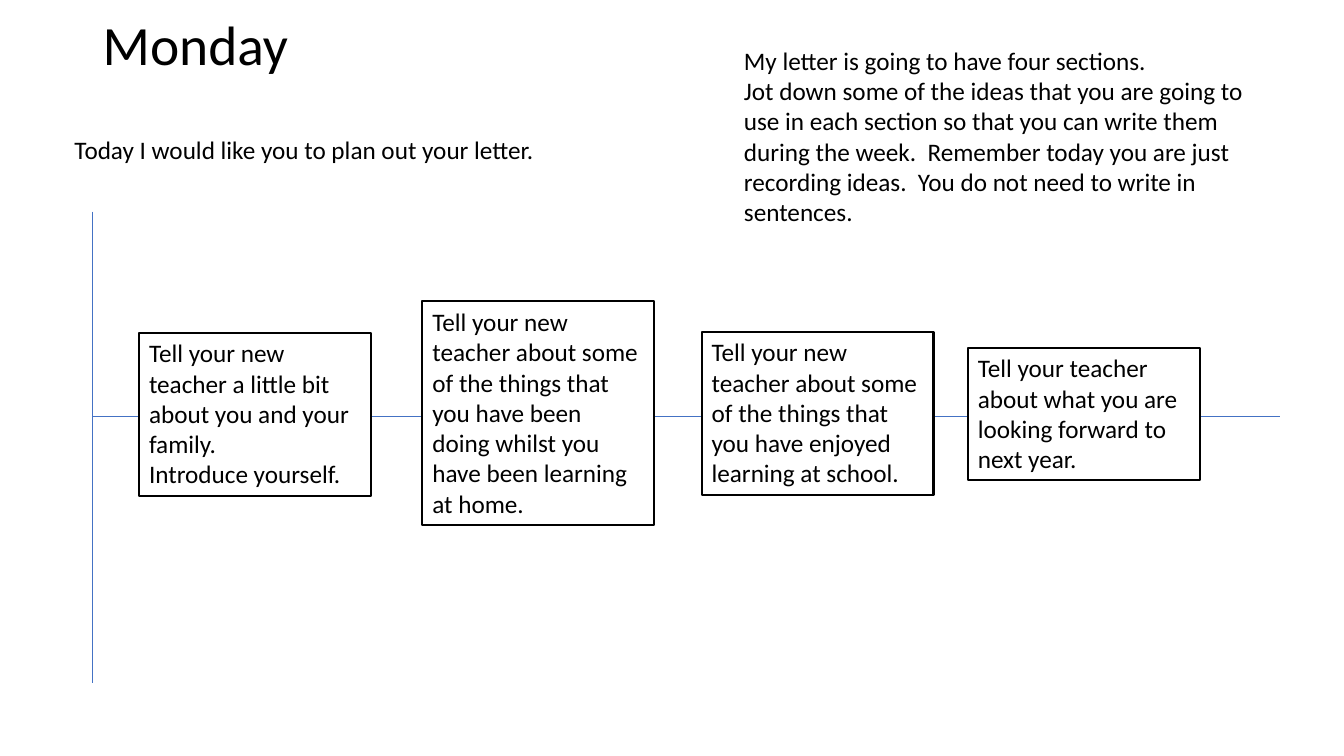
from lxml import etree
from pptx import Presentation
from pptx.dml.color import RGBColor
from pptx.enum.shapes import MSO_CONNECTOR, MSO_SHAPE
from pptx.enum.text import MSO_ANCHOR, PP_ALIGN
from pptx.oxml.ns import qn
from pptx.util import Inches, Pt

LINE = MSO_CONNECTOR.STRAIGHT
RECT = MSO_SHAPE.RECTANGLE
TOP, MIDDLE = MSO_ANCHOR.TOP, MSO_ANCHOR.MIDDLE
LEFT = PP_ALIGN.LEFT

FONT = "Calibri"
COLORS = {"text": "000000", "box": "FFFFFF", "border": "000000", "axis": "4472C4"}

AXIS_X, AXIS_Y = 0.92, 4.13
SECTION_WIDTH = 2.3
# left, top, height, paragraphs
SECTIONS = [
    (1.38, 3.3, 1.62, ["Tell your new teacher a little bit about you and your family.",
                       "Introduce yourself."]),
    (4.19, 2.99, 2.22, ["Tell your new teacher about some of the things that you have "
                        "been doing whilst you have been learning at home."]),
    (6.96, 3.29, 1.62, ["Tell your new teacher about some of the things that you have "
                        "enjoyed learning at school."]),
    (9.6, 3.45, 1.31, ["Tell your teacher about what you are looking forward to next year."]),
]
INSTRUCTIONS = [
    "My letter is going to have four sections.",
    "Jot down some of the ideas that you are going to use in each section so that you "
    "can write them during the week.  Remember today you are just recording ideas.  "
    "You do not need to write in sentences.",
]


def color(name):
    return RGBColor.from_string(COLORS[name])


def write(sp, paragraphs, size=18, anchor=TOP, spacing=1.0):
    tf = sp.text_frame
    tf.word_wrap = True
    tf.vertical_anchor = anchor
    for i, text in enumerate(paragraphs):
        p = tf.add_paragraph() if i else tf.paragraphs[0]
        p.alignment = LEFT
        p.line_spacing = spacing
        r = p.add_run()
        r.text = text
        r.font.name = FONT
        r.font.size = Pt(size)
        r.font.color.rgb = color("text")


def add_text(s, left, top, width, height, paragraphs, **fmt):
    sp = s.shapes.add_textbox(Inches(left), Inches(top), Inches(width), Inches(height))
    write(sp, paragraphs, **fmt)


def add_axis(s, x1, y1, x2, y2):
    line = s.shapes.add_connector(LINE, Inches(x1), Inches(y1), Inches(x2), Inches(y2))
    line.line.color.rgb = color("axis")
    line.line.width = Pt(0.5)
    etree.SubElement(line._element.spPr, qn("a:effectLst"))


def add_section(s, left, top, height, paragraphs):
    sp = s.shapes.add_shape(RECT, Inches(left), Inches(top),
                            Inches(SECTION_WIDTH), Inches(height))
    sp.shadow.inherit = False
    sp.fill.solid()
    sp.fill.fore_color.rgb = color("box")
    sp.line.color.rgb = color("border")
    sp.line.width = Pt(1.5)
    write(sp, paragraphs)


def main():
    prs = Presentation()
    prs.slide_width, prs.slide_height = Inches(13.33), Inches(7.5)
    s = prs.slides.add_slide(prs.slide_layouts[6])

    add_text(s, AXIS_X, 0.1, 11.5, 0.75, ["Monday"], size=39.6, anchor=MIDDLE, spacing=0.9)
    add_text(s, 0.64, 1.28, 12.19, 1.01, ["Today I would like you to plan out your letter."])
    add_axis(s, AXIS_X, 2.1, AXIS_X, 6.78)
    add_axis(s, AXIS_X, AXIS_Y, 12.7, AXIS_Y)
    for section in SECTIONS:
        add_section(s, *section)
    add_text(s, 7.28, 0.4, 5.42, 1.92, INSTRUCTIONS)

    prs.save("out.pptx")


if __name__ == "__main__":
    main()
